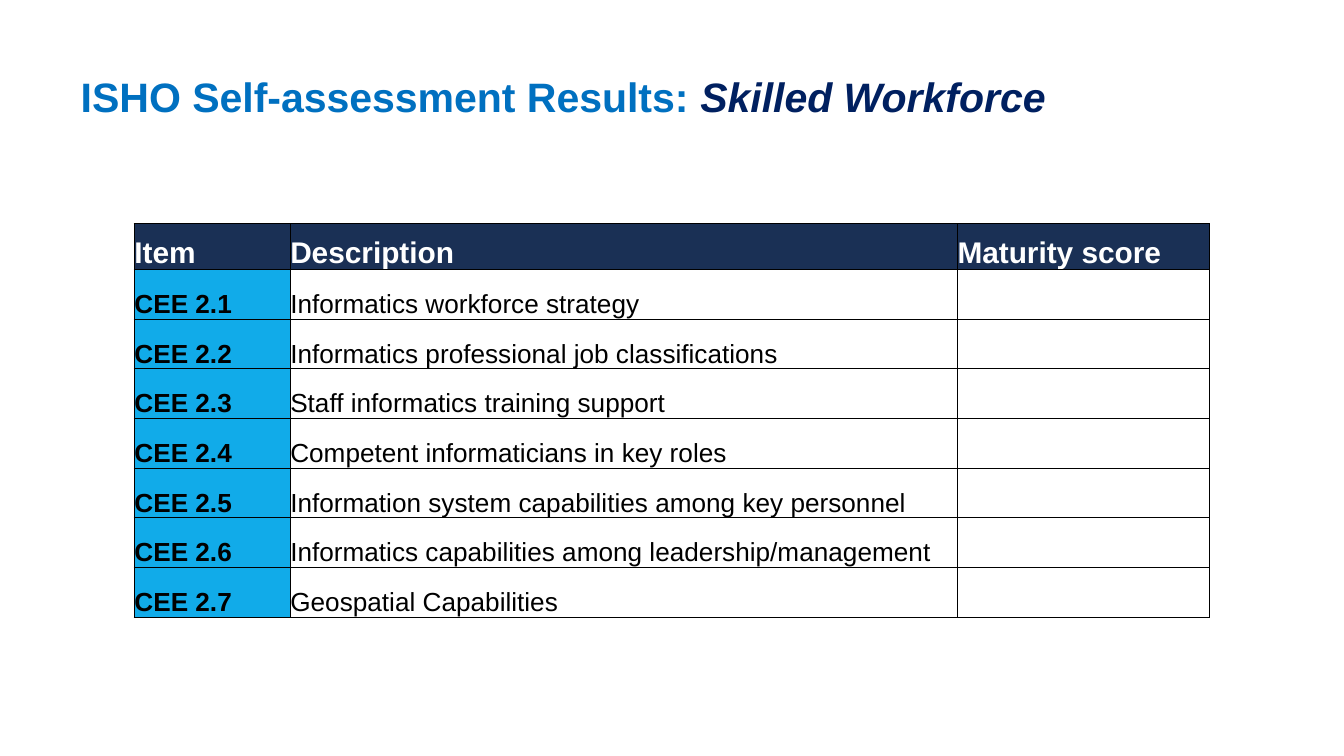
from dataclasses import dataclass
from lxml.etree import SubElement
from pptx import Presentation
from pptx.dml.color import RGBColor
from pptx.enum.text import MSO_ANCHOR, MSO_AUTO_SIZE, PP_ALIGN
from pptx.oxml.ns import qn
from pptx.util import Pt

SCALE = 4572  # EMU in one px, 200 px to the inch


@dataclass(frozen=True)
class Theme:
    font: str = "Arial"
    blue: str = "0070C0"
    navy: str = "002060"
    head: str = "1A3055"
    item: str = "11ABE9"
    white: str = "FFFFFF"
    black: str = "000000"
    title_pt: int = 22
    head_pt: int = 16
    body_pt: int = 14


THEME = Theme()
HEADS = ["Item", "Description", "Maturity score"]
TOPICS = [
    "Informatics workforce strategy",
    "Informatics professional job classifications",
    "Staff informatics training support",
    "Competent informaticians in key roles",
    "Information system capabilities among key personnel",
    "Informatics capabilities among leadership/management",
    "Geospatial Capabilities",
]
COLS = [232, 993, 375]
HEAD_H, ROW_H = 68, 74


def px(n):
    return n * SCALE


def add_run(para, text, size, color, bold=False, italic=False):
    run = para.add_run()
    run.text = text
    font = run.font
    font.name, font.size = THEME.font, Pt(size)
    font.bold, font.italic = bold, italic
    font.color.rgb = RGBColor.from_string(color)


def add_title(slide, parts):
    title = slide.shapes.title
    title.left, title.top, title.width, title.height = map(px, (105, 46, 1486, 194))
    frame = title.text_frame
    frame.word_wrap = True
    frame.auto_size = MSO_AUTO_SIZE.NONE
    frame.vertical_anchor = MSO_ANCHOR.MIDDLE
    frame.margin_left = frame.margin_right = px(15)
    frame.margin_top = frame.margin_bottom = px(8)
    para = frame.paragraphs[0]
    para.alignment = PP_ALIGN.LEFT
    for text, color, italic in parts:
        add_run(para, text, THEME.title_pt, color, True, italic)


def set_edges(cell, left):
    # Border lines come before the fill in the cell properties
    props = cell._tc.get_or_add_tcPr()
    widths = {"L": left, "R": 0.75, "T": 0.75, "B": 0.75}
    for i, (side, width) in enumerate(widths.items()):
        line = SubElement(props, qn(f"a:ln{side}"), w=str(Pt(width)))
        fill = SubElement(line, qn("a:solidFill"))
        SubElement(fill, qn("a:srgbClr"), val=THEME.black)
        props.insert(i, line)


def set_cell(cell, text, fill, size, color, bold, left):
    cell.fill.solid()
    cell.fill.fore_color.rgb = RGBColor.from_string(fill)
    cell.vertical_anchor = MSO_ANCHOR.BOTTOM
    cell.margin_left = cell.margin_right = 0
    cell.margin_top = cell.margin_bottom = 0
    set_edges(cell, left)
    if text:
        add_run(cell.text_frame.paragraphs[0], text, size, color, bold)


def add_scores(slide):
    rows = [HEADS] + [[f"CEE 2.{n}", topic, ""] for n, topic in enumerate(TOPICS, 1)]
    height = HEAD_H + ROW_H * len(TOPICS)
    box = map(px, (200, 333, sum(COLS), height))
    table = slide.shapes.add_table(len(rows), len(COLS), *box).table
    for col, width in zip(table.columns, COLS):
        col.width = px(width)
    for r, row in enumerate(rows):
        table.rows[r].height = px(ROW_H if r else HEAD_H)
        for c, text in enumerate(row):
            if r == 0:
                style = THEME.head, THEME.head_pt, THEME.white, True
            else:
                fill = THEME.white if c else THEME.item
                style = fill, THEME.body_pt, THEME.black, c == 0
            set_cell(table.cell(r, c), text, *style, left=0.75 if c else 1)


def main():
    deck = Presentation()
    deck.slide_width, deck.slide_height = px(2000), px(1125)
    slide = deck.slides.add_slide(deck.slide_layouts[5])
    # Heading
    add_title(slide, [
        ("ISHO Self-assessment Results: ", THEME.blue, False),
        ("Skilled Workforce", THEME.navy, True),
    ])
    # Score table
    add_scores(slide)
    deck.save("out.pptx")


if __name__ == "__main__":
    main()
